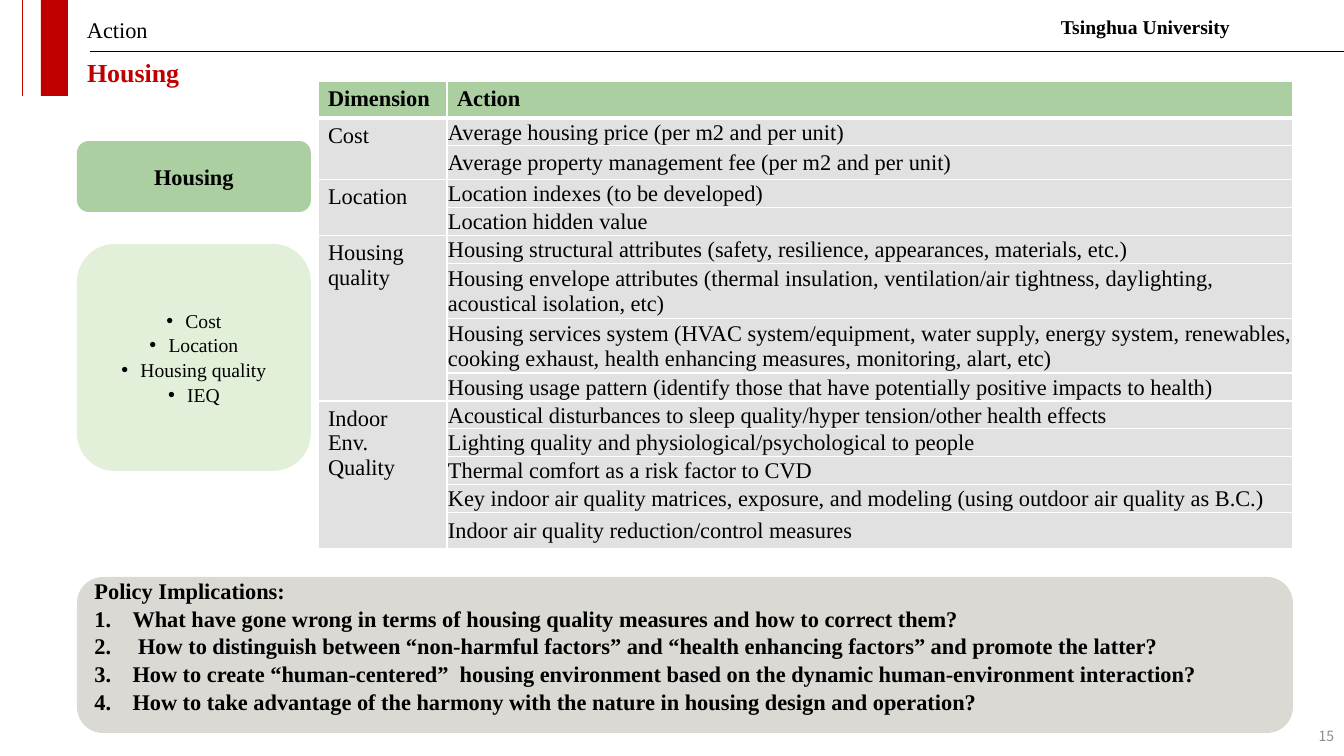
from dataclasses import dataclass

from lxml import etree
from pptx import Presentation
from pptx.dml.color import RGBColor
from pptx.enum.shapes import MSO_CONNECTOR, MSO_SHAPE
from pptx.enum.text import MSO_ANCHOR, MSO_AUTO_SIZE, PP_ALIGN
from pptx.oxml.ns import qn
from pptx.util import Emu, Pt

LEFT, MID, RIGHT = PP_ALIGN.LEFT, PP_ALIGN.CENTER, PP_ALIGN.RIGHT
TOP, CENTER = MSO_ANCHOR.TOP, MSO_ANCHOR.MIDDLE
FIXED = MSO_AUTO_SIZE.NONE
RECT, ROUND = MSO_SHAPE.RECTANGLE, MSO_SHAPE.ROUNDED_RECTANGLE
STRAIGHT = MSO_CONNECTOR.STRAIGHT
SCALE = 914400 / 100.8


@dataclass(frozen=True)
class Theme:
    font: str = "Times New Roman"
    sans: str = "Noto Sans CJK SC"
    red: str = "C00000"
    black: str = "000000"
    white: str = "FFFFFF"
    muted: str = "8C8C8C"
    green: str = "ABCFA1"
    pale: str = "E2F0D9"
    cell: str = "E1E1E1"
    panel: str = "DAD9D4"
    head: float = 18.5
    body: int = 16
    small: int = 14
    tiny: int = 10


T = Theme()

# Dimension, then its actions with their row heights
GROUPS = [
    ("Cost", [
        ("Average housing price (per m2 and per unit)", 26),
        ("Average property management fee (per m2 and per unit)", 34)]),
    ("Location", [
        ("Location indexes (to be developed)", 26),
        ("Location hidden value", 26)]),
    ("Housing quality", [
        ("Housing structural attributes (safety, resilience, appearances, materials, etc.)", 27),
        ("Housing envelope attributes (thermal insulation, ventilation/air tightness, "
         "daylighting, acoustical isolation, etc)", 51),
        ("Housing services system (HVAC system/equipment, water supply, energy system, "
         "renewables, cooking exhaust, health enhancing measures, monitoring, alart, etc)", 51),
        ("Housing usage pattern (identify those that have potentially positive impacts "
         "to health)", 26)]),
    ("Indoor\nEnv. Quality", [
        ("Acoustical disturbances to sleep quality/hyper tension/other health effects", 26),
        ("Lighting quality and physiological/psychological to people", 25),
        ("Thermal comfort as a risk factor to CVD", 26),
        ("Key indoor air quality matrices, exposure, and modeling "
         "(using outdoor air quality as B.C.)", 26),
        ("Indoor air quality reduction/control measures", 36)]),
]
TOPICS = "Cost\nLocation\nHousing quality\nIEQ"
POLICY = """Policy Implications:
What have gone wrong in terms of housing quality measures and how to correct them?
 How to distinguish between “non-harmful factors” and “health enhancing factors” and promote the latter?
How to create “human-centered”  housing environment based on the dynamic human-environment interaction?
How to take advantage of the harmony with the nature in housing design and operation?"""


def px(n):
    return Emu(round(n * SCALE))


def rgb(color):
    return RGBColor.from_string(color)


def write(frame, text, size=T.body, color=T.black, font=T.font, bold=False,
          align=LEFT, space=None, gap=0, bullet=None, indent=0, first=0):
    """Fill a frame, one paragraph a line; bullets begin at line `first`."""
    frame.word_wrap = True
    for i, line in enumerate(text.split("\n")):
        para = frame.add_paragraph() if i else frame.paragraphs[0]
        para.alignment = align
        if space:
            para.line_spacing = space
        para.space_before = Pt(gap if i else 0)
        if bullet and i >= first:
            props = para._p.get_or_add_pPr()
            props.set("marL", str(px(indent)))
            props.set("indent", str(-px(indent)))
            if bullet == "1.":
                etree.SubElement(props, qn("a:buAutoNum"), type="arabicPeriod")
            else:
                etree.SubElement(props, qn("a:buFont"), typeface="Arial")
                etree.SubElement(props, qn("a:buChar"), char=bullet)
        run = para.add_run()
        run.text = line
        run.font.name, run.font.size, run.font.bold = font, Pt(size), bold
        run.font.color.rgb = rgb(color)


def label(slide, box, text, anchor=TOP, **form):
    frame = slide.shapes.add_textbox(*map(px, box)).text_frame
    frame.vertical_anchor = anchor
    write(frame, text, **form)


def block(slide, kind, box, color):
    shape = slide.shapes.add_shape(kind, *map(px, box))
    shape.shadow.inherit = False
    shape.fill.solid()
    shape.fill.fore_color.rgb = rgb(color)
    shape.line.fill.background()
    shape.text_frame.vertical_anchor = CENTER
    return shape


def rule(slide, ends, color):
    line = slide.shapes.add_connector(STRAIGHT, *map(px, ends))
    line.line.color.rgb = rgb(color)
    line.line.width = Pt(0.5)
    etree.SubElement(line._element.spPr, qn("a:effectLst"))


def header(slide, box):
    x, y, w, h = box
    # Red bar and rules
    block(slide, RECT, (x + 41, y, 27, h), T.red)
    rule(slide, (x + 22, y, x + 22, y + h), T.red)
    rule(slide, (x + w, y + 51, x + 90, y + 51), T.black)
    # Section, owner and title
    label(slide, (x + 77, y + 14, 900, 45), "Action", space=0.9)
    label(slide, (x + 1051, y + 10, 246, 34), "Tsinghua University",
          size=T.small, bold=True)
    title = slide.shapes.title
    title.left, title.top, title.width, title.height = map(
        px, (x + 77, y + 58, w - 85, 38))
    title.text_frame.auto_size = FIXED
    title.text_frame.vertical_anchor = TOP
    write(title.text_frame, "Housing", size=T.head, color=T.red, bold=True, space=0.8)


def topics(slide, box):
    x, y, w, h = box
    name = block(slide, ROUND, (x, y, w, 71), T.green)
    write(name.text_frame, "Housing", bold=True, align=MID)
    items = block(slide, ROUND, (x, y + 103, w, h - 103), T.pale)
    write(items.text_frame, TOPICS, size=T.small, align=MID, gap=0.7,
          bullet="•", indent=19)


def style(cell, text, color, base=1, tight=False, bold=False):
    props = cell._tc.get_or_add_tcPr()
    for side, width in zip("LRTB", (1, 1, 1, base)):
        edge = etree.SubElement(props, qn(f"a:ln{side}"), w=str(Pt(width)))
        fill = etree.SubElement(edge, qn("a:solidFill"))
        etree.SubElement(fill, qn("a:srgbClr"), val=T.white)
    cell.fill.solid()
    cell.fill.fore_color.rgb = rgb(color)
    if tight:
        cell.vertical_anchor = CENTER
        cell.margin_left = cell.margin_right = cell.margin_top = px(1)
        cell.margin_bottom = 0
    if text:
        write(cell.text_frame, text, bold=bold)


def actions(slide, box):
    rows = [row for _, group in GROUPS for row in group]
    grid = slide.shapes.add_table(len(rows) + 1, 2, *map(px, box)).table
    grid.first_row = grid.horz_banding = False
    for col, width in zip(grid.columns, (129, box[2] - 129)):
        col.width = px(width)
    for row, height in zip(grid.rows, [36] + [high for _, high in rows]):
        row.height = px(height)
    for col, text in enumerate(("Dimension", "Action")):
        style(grid.cell(0, col), text, T.green, base=3, bold=True)
    # Each dimension spans its actions
    at = 1
    for name, group in GROUPS:
        for i, (text, _) in enumerate(group):
            style(grid.cell(at + i, 0), "" if i else name, T.cell)
            style(grid.cell(at + i, 1), text, T.cell, tight=True)
        grid.cell(at, 0).merge(grid.cell(at + len(group) - 1, 0))
        at += len(group)


def policy(slide, box):
    frame = block(slide, ROUND, box, T.panel).text_frame
    frame.margin_top, frame.margin_bottom = 0, px(18)
    write(frame, POLICY, bold=True, gap=0.7, bullet="1.", indent=38, first=1)


def main():
    deck = Presentation()
    deck.slide_width, deck.slide_height = px(1344), px(756)
    slide = deck.slides.add_slide(deck.slide_layouts[5])
    header(slide, (0, 0, 1344, 96))
    topics(slide, (77, 141, 234, 330))
    actions(slide, (318, 81, 975, 442))
    policy(slide, (77, 577, 1216, 156))
    # Page number
    label(slide, (1281, 716, 63, 40), "15", anchor=CENTER, size=T.tiny,
          color=T.muted, font=T.sans, align=RIGHT)
    deck.save("out.pptx")


if __name__ == "__main__":
    main()
